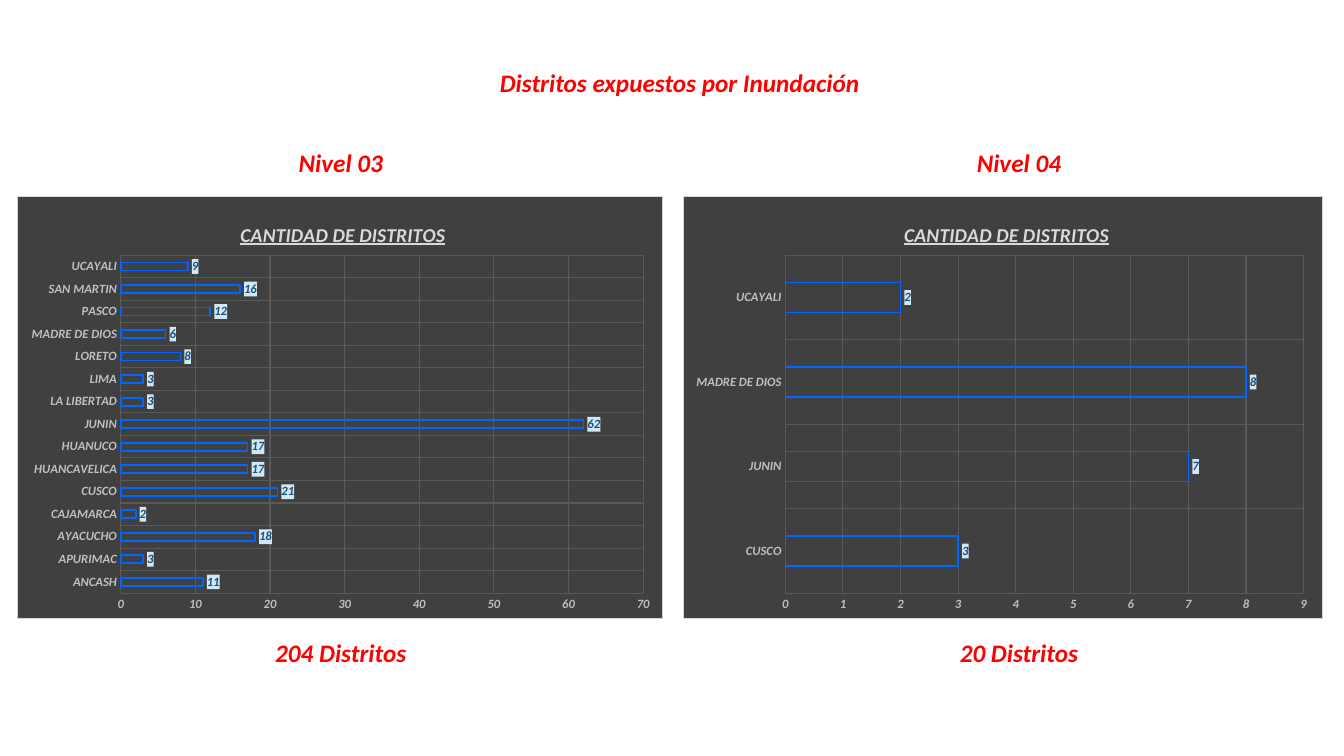
from dataclasses import dataclass

from lxml import etree
from pptx import Presentation
from pptx.chart import data as chart_data
from pptx.dml import color as dml
from pptx.enum import chart as chart_enum
from pptx.enum import text as text_enum
from pptx.oxml import ns
from pptx.util import Cm, Pt


@dataclass(frozen=True)
class Theme:
    """Colours, font and type sizes of the slide."""

    font: str = "Calibri"
    heading: str = "FF0000"
    panel: str = "404040"
    border: str = "D9D9D9"
    grid: str = "595959"
    axis_text: str = "BFBFBF"
    bar: str = "0066FF"
    label_text: str = "1F4E79"
    label_fill: str = "D0E9F7"
    heading_size: float = 18
    chart_title_size: float = 14
    chart_size: float = 9


@dataclass(frozen=True)
class Panel:
    """One flood level: its captions, chart frame in cm, and districts."""

    level: str
    total: str
    centre: float
    left: float
    width: float
    plot_width: float
    axis_maximum: int
    axis_step: int
    districts: dict[str, int]


THEME = Theme()
CHART_TITLE = "CANTIDAD DE DISTRITOS"
CHART_TOP, CHART_HEIGHT = 4.93, 10.67
LEVEL_TOP, TOTAL_TOP, CAPTION_HEIGHT = 3.58, 15.93, 1.02

PANELS = (
    Panel("Nivel 03", "204 Distritos", 8.59, 0.43, 16.28, 0.81, 70, 10, {
        "ANCASH": 11, "APURIMAC": 3, "AYACUCHO": 18, "CAJAMARCA": 2,
        "CUSCO": 21, "HUANCAVELICA": 17, "HUANUCO": 17, "JUNIN": 62,
        "LA LIBERTAD": 3, "LIMA": 3, "LORETO": 8, "MADRE DE DIOS": 6,
        "PASCO": 12, "SAN MARTIN": 16, "UCAYALI": 9,
    }),
    Panel("Nivel 04", "20 Distritos", 25.68, 17.2, 16.15, 0.81, 9, 1, {
        "CUSCO": 3, "JUNIN": 7, "MADRE DE DIOS": 8, "UCAYALI": 2,
    }),
)


def style_font(font, size: float, colour: str) -> None:
    """Apply the bold italic face shared by all text."""
    font.name = THEME.font
    font.size = Pt(size)
    font.bold = font.italic = True
    font.color.rgb = dml.RGBColor.from_string(colour)


def style_line(line, colour: str, width: float) -> None:
    """Give a line its colour and width."""
    line.color.rgb = dml.RGBColor.from_string(colour)
    line.width = Pt(width)


def add_caption(slide, caption: str, centre: float, top: float,
                width: float, wrap: bool = True) -> None:
    """Add a red caption centred on a horizontal position."""
    box = slide.shapes.add_textbox(Cm(centre - width / 2), Cm(top),
                                   Cm(width), Cm(CAPTION_HEIGHT))
    frame = box.text_frame
    frame.text = caption
    frame.word_wrap = wrap
    paragraph = frame.paragraphs[0]
    paragraph.alignment = text_enum.PP_ALIGN.CENTER
    style_font(paragraph.runs[0].font, THEME.heading_size, THEME.heading)


def shape_properties(fill: str = "", border: str = ""):
    """Build chart shape properties with an optional fill and border."""
    properties = etree.Element(ns.qn("c:spPr"))
    outline = etree.Element(ns.qn("a:ln"), w=str(Pt(0.75)))
    for parent, colour in ((properties, fill), (outline, border)):
        if colour:
            solid = etree.SubElement(parent, ns.qn("a:solidFill"))
            etree.SubElement(solid, ns.qn("a:srgbClr"), val=colour)
        else:
            etree.SubElement(parent, ns.qn("a:noFill"))
    properties.append(outline)
    return properties


def set_layout(parent, index: int, **settings: object) -> None:
    """Place a chart part by fractions of the chart frame."""
    for previous in parent.findall(ns.qn("c:layout")):
        parent.remove(previous)
    layout = etree.Element(ns.qn("c:layout"))
    manual = etree.SubElement(layout, ns.qn("c:manualLayout"))
    for name, value in settings.items():
        etree.SubElement(manual, ns.qn(f"c:{name}"), val=str(value))
    parent.insert(index, layout)


def style_axis(axis) -> None:
    """Show grid lines and pale labels, without ticks or an axis line."""
    axis.has_major_gridlines = True
    style_line(axis.major_gridlines.format.line, THEME.grid, 0.75)
    axis.major_tick_mark = axis.minor_tick_mark = chart_enum.XL_TICK_MARK.NONE
    axis.format.line.fill.background()
    style_font(axis.tick_labels.font, THEME.chart_size, THEME.axis_text)


def style_bars(plot) -> None:
    """Outline the bars and label their ends."""
    plot.gap_width, plot.overlap = 182, -50
    plot.vary_by_categories = False
    series = plot.series[0]
    series.format.fill.background()
    style_line(series.format.line, THEME.bar, 1.25)
    labels = series.data_labels
    labels.show_value = True
    labels.position = chart_enum.XL_LABEL_POSITION.OUTSIDE_END
    labels.number_format, labels.number_format_is_linked = "#,##0", False
    style_font(labels.font, THEME.chart_size, THEME.label_text)
    text_properties = labels._element.find(ns.qn("c:txPr"))
    text_properties.addprevious(shape_properties(THEME.label_fill))


def add_district_chart(slide, panel: Panel) -> None:
    """Draw the bar chart of districts for one level."""
    values = chart_data.CategoryChartData(number_format="#,##0")
    values.categories = list(panel.districts)
    values.add_series("Series 1", list(panel.districts.values()))
    chart = slide.shapes.add_chart(
        chart_enum.XL_CHART_TYPE.BAR_CLUSTERED, Cm(panel.left), Cm(CHART_TOP),
        Cm(panel.width), Cm(CHART_HEIGHT), values).chart
    chart.has_legend = False
    chart.font.name, chart.font.size = THEME.font, Pt(THEME.chart_size)

    chart.has_title = True
    title = chart.chart_title
    title.include_in_layout = False
    title.text_frame.text = CHART_TITLE
    title_font = title.text_frame.paragraphs[0].runs[0].font
    style_font(title_font, THEME.chart_title_size, THEME.border)
    title_font.underline = True
    set_layout(title._element, 1, xMode="edge", yMode="edge", x=0.34, y=0.05)

    style_axis(chart.category_axis)
    style_axis(chart.value_axis)
    chart.value_axis.minimum_scale = 0
    chart.value_axis.maximum_scale = panel.axis_maximum
    chart.value_axis.major_unit = panel.axis_step
    style_bars(chart.plots[0])

    chart_part = chart._chartSpace.find(ns.qn("c:chart"))
    chart_part.addnext(shape_properties(THEME.panel, THEME.border))
    plot_area = chart_part.find(ns.qn("c:plotArea"))
    set_layout(plot_area, 0, layoutTarget="inner", xMode="edge", yMode="edge",
               x=0.16, y=0.14, w=panel.plot_width, h=0.8)
    plot_area.append(shape_properties())


def main() -> None:
    """Build and save the flood exposure slide."""
    presentation = Presentation()
    presentation.slide_width, presentation.slide_height = Cm(33.87), Cm(19.05)
    slide = presentation.slides.add_slide(presentation.slide_layouts[6])
    add_caption(slide, "Distritos expuestos por Inundación", 17.13, 1.57, 9.68,
                wrap=False)
    for panel in PANELS:
        add_caption(slide, panel.level, panel.centre, LEVEL_TOP, 2.82)
        add_caption(slide, panel.total, panel.centre, TOTAL_TOP, 3.9)
        add_district_chart(slide, panel)
    presentation.save("out.pptx")


if __name__ == "__main__":
    main()
